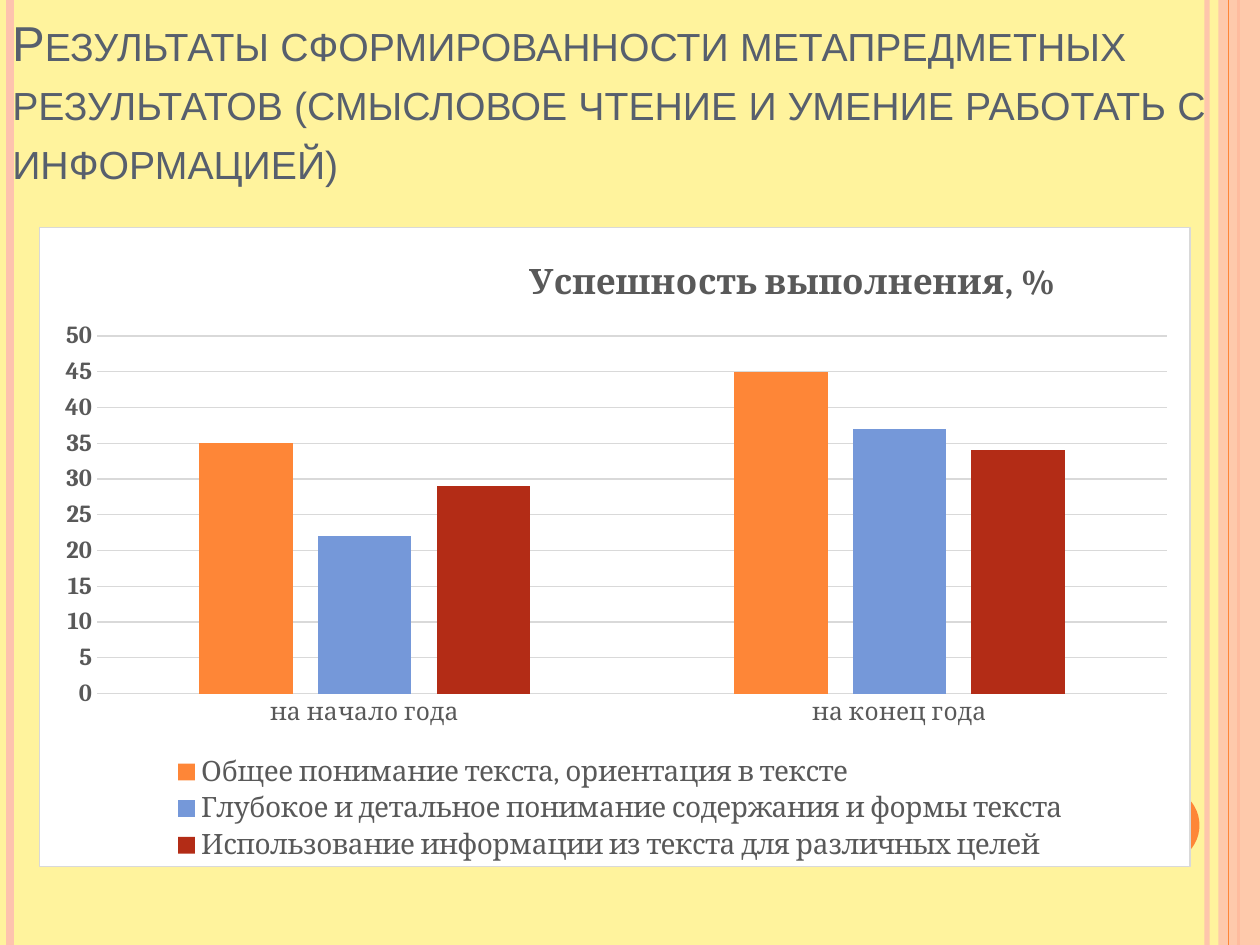
from dataclasses import dataclass

from lxml.etree import Element, SubElement
from pptx import Presentation
from pptx.chart.data import CategoryChartData
from pptx.dml.color import RGBColor
from pptx.enum.chart import XL_CHART_TYPE, XL_LEGEND_POSITION, XL_TICK_MARK
from pptx.enum.shapes import MSO_CONNECTOR, MSO_SHAPE
from pptx.enum.text import MSO_ANCHOR
from pptx.oxml.ns import qn
from pptx.util import Inches, Pt

PEACH, ORANGE = "FEC3AE", "FE8637"
GREY, RULE = "595959", "D9D9D9"


@dataclass(frozen=True)
class Stripe:
    x: float
    color: str
    points: float
    opacity: int = 100


@dataclass(frozen=True)
class Block:
    preset: MSO_SHAPE
    left: float
    top: float
    width: float
    height: float
    color: str
    opacity: int = 100


@dataclass(frozen=True)
class Skill:
    name: str
    scores: tuple[int, int]
    color: str


BACK_STRIPES = [
    Stripe(9.58, PEACH, 3, 93),
    Stripe(0.08, PEACH, 4.5),
    Stripe(9.83, ORANGE, 1.5),
]
BAND = Block(MSO_SHAPE.RECTANGLE, 9.67, 0, 0.33, 7.5, PEACH, 87)
BAND_STRIPE = Stripe(9.75, ORANGE, 0.75)
BADGE = Block(MSO_SHAPE.OVAL, 8.92, 6.25, 0.6, 0.6, ORANGE)

HEADING = (
    "Результаты сформированности метапредметных результатов "
    "(смысловое чтение и умение работать с информацией)"
)
PERIODS = ["на начало года", "на конец года"]
SKILLS = [
    Skill("Общее понимание текста, ориентация в тексте", (35, 45), ORANGE),
    Skill("Глубокое и детальное понимание содержания и формы текста", (22, 37), "7598D9"),
    Skill("Использование информации из текста для различных целей", (29, 34), "B32C16"),
]


def paint(fill, color: str, opacity: int = 100) -> None:
    fill.solid()
    fill.fore_color.rgb = RGBColor.from_string(color)
    if opacity < 100:
        srgb = fill._xPr.find(".//" + qn("a:srgbClr"))
        SubElement(srgb, qn("a:alpha"), val=str(opacity * 1000))


def style_font(font, name: str, size: float, color: str, bold: bool = False) -> None:
    font.name = name
    font.size = Pt(size)
    font.bold = bold
    paint(font.fill, color)


def style_line(line, color: str, points: float, opacity: int = 100) -> None:
    line.width = Pt(points)
    paint(line.fill, color, opacity)


def draw_stripe(slide, stripe: Stripe) -> None:
    line = slide.shapes.add_connector(
        MSO_CONNECTOR.STRAIGHT, Inches(stripe.x), 0, Inches(stripe.x), Inches(7.5)
    )
    style_line(line.line, stripe.color, stripe.points, stripe.opacity)
    SubElement(line._element.spPr, qn("a:effectLst"))


def draw_block(slide, block: Block) -> None:
    shape = slide.shapes.add_shape(
        block.preset,
        Inches(block.left), Inches(block.top), Inches(block.width), Inches(block.height),
    )
    shape.shadow.inherit = False
    paint(shape.fill, block.color, block.opacity)
    shape.line.fill.background()


def draw_heading(slide) -> None:
    frame = slide.shapes.add_textbox(0, 0, Inches(10), Inches(1.55)).text_frame
    frame.word_wrap = True
    frame.vertical_anchor = MSO_ANCHOR.BOTTOM
    paragraph = frame.paragraphs[0]
    paragraph.line_spacing = Pt(33.7)
    run = paragraph.add_run()
    run.text = HEADING
    style_font(run.font, "Arial", 28, "575F6D")
    run._r.get_or_add_rPr().set("cap", "small")


def place(part, index: int, inner: bool = False, **fractions: float) -> None:
    for old in part.findall(qn("c:layout")):
        part.remove(old)
    layout = Element(qn("c:layout"))
    part.insert(index, layout)
    manual = SubElement(layout, qn("c:manualLayout"))
    if inner:
        SubElement(manual, qn("c:layoutTarget"), val="inner")
    for side in ("x", "y"):
        SubElement(manual, qn(f"c:{side}Mode"), val="edge")
    for side, fraction in fractions.items():
        SubElement(manual, qn(f"c:{side}"), val=str(fraction))


def frame_chart(chart) -> None:
    properties = Element(qn("c:spPr"))
    chart.element.find(qn("c:chart")).addnext(properties)
    fill = SubElement(properties, qn("a:solidFill"))
    SubElement(fill, qn("a:srgbClr"), val="FFFFFF")
    border = SubElement(properties, qn("a:ln"), w=str(Pt(0.75)))
    SubElement(SubElement(border, qn("a:solidFill")), qn("a:srgbClr"), val=RULE)


def draw_chart(slide) -> None:
    data = CategoryChartData()
    data.categories = PERIODS
    for skill in SKILLS:
        data.add_series(skill.name, skill.scores)
    chart = slide.shapes.add_chart(
        XL_CHART_TYPE.COLUMN_CLUSTERED,
        Inches(0.31), Inches(1.8), Inches(9.14), Inches(5.08), data,
    ).chart
    style_font(chart.font, "Cambria", 10, "000000")
    frame_chart(chart)

    plot = chart.plots[0]
    plot.vary_by_categories = False
    plot.gap_width = 219
    plot.overlap = -27
    for series, skill in zip(plot.series, SKILLS):
        paint(series.format.fill, skill.color)

    periods, percent = chart.category_axis, chart.value_axis
    for axis in (periods, percent):
        axis.major_tick_mark = axis.minor_tick_mark = XL_TICK_MARK.NONE
        style_font(axis.tick_labels.font, "Cambria", 14, GREY, axis is percent)
    style_line(periods.format.line, RULE, 0.75)
    percent.format.line.fill.background()
    percent.minimum_scale, percent.maximum_scale, percent.major_unit = 0, 50, 5
    style_line(percent.major_gridlines.format.line, RULE, 0.75)

    chart.has_title = True
    caption = chart.chart_title.text_frame.paragraphs[0].add_run()
    caption.text = "Успешность выполнения, %"
    style_font(caption.font, "Cambria", 20, GREY, True)

    chart.has_legend = True
    chart.legend.position = XL_LEGEND_POSITION.BOTTOM
    chart.legend.include_in_layout = False
    style_font(chart.legend.font, "Cambria", 16, GREY)

    body = chart.element.find(qn("c:chart"))
    place(body.find(qn("c:title")), 1, x=0.42, y=0.04)
    place(body.find(qn("c:plotArea")), 0, inner=True, x=0.05, y=0.17, w=0.93, h=0.56)
    place(body.find(qn("c:legend")), 1, x=0.11, y=0.82, w=0.79, h=0.18)


def main() -> None:
    deck = Presentation()
    deck.slide_width, deck.slide_height = Inches(10), Inches(7.5)
    slide = deck.slides.add_slide(deck.slide_layouts[6])
    paint(slide.background.fill, "FFF39D")
    for stripe in BACK_STRIPES:
        draw_stripe(slide, stripe)
    draw_block(slide, BAND)
    draw_stripe(slide, BAND_STRIPE)
    draw_block(slide, BADGE)
    draw_heading(slide)
    draw_chart(slide)
    deck.save("out.pptx")


if __name__ == "__main__":
    main()
